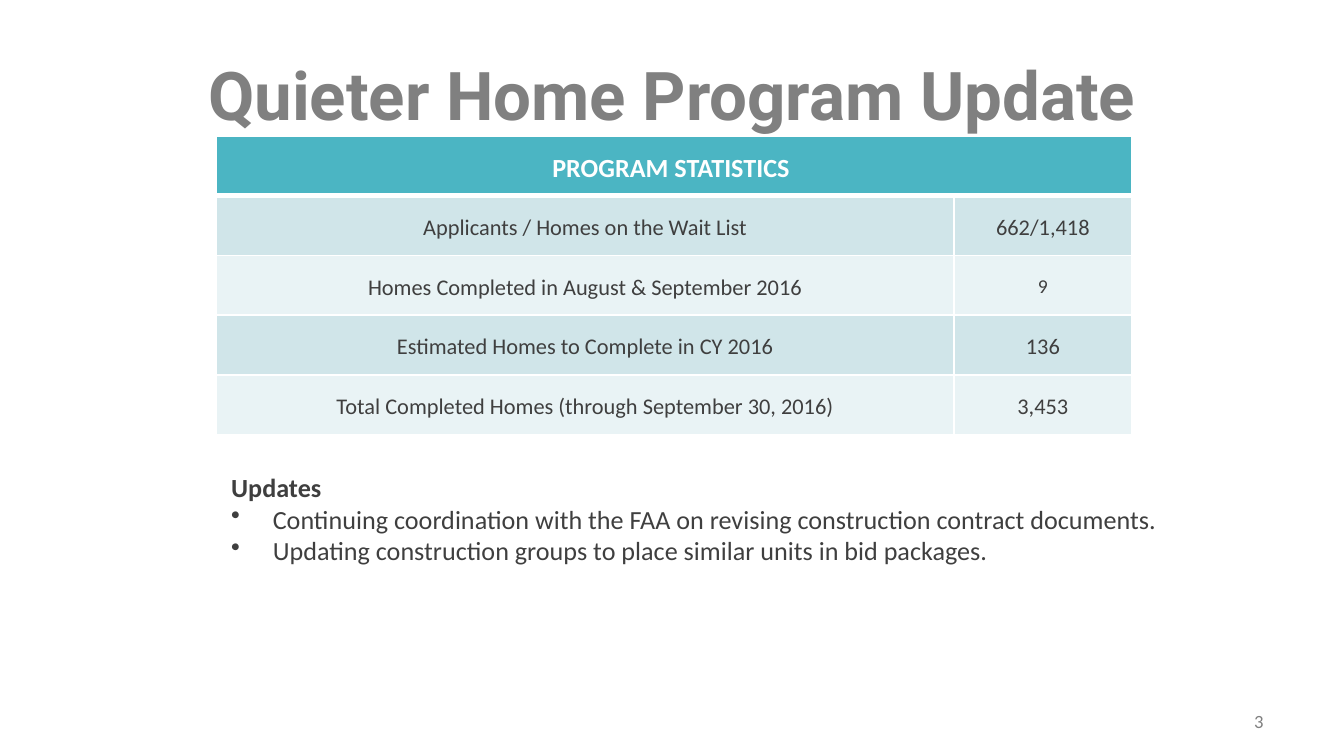
from dataclasses import dataclass

from lxml import etree
from pptx import Presentation
from pptx.dml.color import RGBColor
from pptx.enum.text import MSO_ANCHOR, PP_ALIGN
from pptx.oxml.ns import qn
from pptx.util import Inches, Pt

LEFT, CENTER, RIGHT = PP_ALIGN.LEFT, PP_ALIGN.CENTER, PP_ALIGN.RIGHT
TOP, MIDDLE = MSO_ANCHOR.TOP, MSO_ANCHOR.MIDDLE
BLANK_LAYOUT = 6
GRID = 100


@dataclass(frozen=True)
class Theme:
    heading_font: str = "Roboto"
    body_font: str = "Calibri"
    ink: str = "3F3F3F"
    muted: str = "808080"
    white: str = "FFFFFF"
    header: str = "4BB5C3"
    bands: tuple = ("D0E5E9", "E9F3F5")
    title_size: float = 36
    lead_size: float = 14
    cell_size: float = 12
    small_size: float = 10.5
    number_size: float = 10


THEME = Theme()


def write_text(para, text, size=THEME.lead_size, color=THEME.ink,
               font=THEME.body_font, bold=False, align=LEFT,
               line_spacing=None, gap=0, bullet=None):
    para.alignment = align
    para.line_spacing = line_spacing
    para.space_before = para.space_after = Pt(gap)
    span = para.add_run()
    span.text = text
    span.font.size = Pt(size)
    span.font.name = font
    span.font.bold = bold
    span.font.color.rgb = RGBColor.from_string(color)
    if bullet:
        properties = para._p.get_or_add_pPr()
        indent = Inches(0.31)
        properties.set("marL", str(indent))
        properties.set("indent", str(-indent))
        etree.SubElement(properties, qn("a:buChar"), char=bullet)


class SlideBuilder:
    def __init__(self, deck, theme):
        self.theme = theme
        self.column = deck.slide_width / GRID
        self.row = deck.slide_height / GRID
        self.slide = deck.slides.add_slide(deck.slide_layouts[BLANK_LAYOUT])

    def place(self, left, top, width, height):
        return (round(left * self.column), round(top * self.row),
                round(width * self.column), round(height * self.row))

    def text(self, area, lines, anchor=MIDDLE, insets=(0.1, 0.05)):
        frame = self.slide.shapes.add_textbox(*self.place(*area)).text_frame
        frame.word_wrap = True
        frame.vertical_anchor = anchor
        frame.margin_left = frame.margin_right = Inches(insets[0])
        frame.margin_top = frame.margin_bottom = Inches(insets[1])
        for index, (text, style) in enumerate(lines):
            para = frame.add_paragraph() if index else frame.paragraphs[0]
            write_text(para, text, **style)

    def border(self, cell, bottom):
        properties = cell._tc.get_or_add_tcPr()
        for side, width in (("L", 1), ("R", 1), ("T", 1), ("B", bottom)):
            line = etree.SubElement(properties, qn(f"a:ln{side}"), w=str(Pt(width)))
            fill = etree.SubElement(line, qn("a:solidFill"))
            etree.SubElement(fill, qn("a:srgbClr"), val=self.theme.white)

    def cell(self, cell, text, fill, bottom=1, **style):
        self.border(cell, bottom)
        cell.fill.solid()
        cell.fill.fore_color.rgb = RGBColor.from_string(fill)
        cell.vertical_anchor = MIDDLE
        cell.margin_top = cell.margin_bottom = 0
        if text:
            write_text(cell.text_frame.paragraphs[0], text, align=CENTER,
                       line_spacing=1.15, gap=5, **style)

    def statistics_table(self, area, heading, records, widths, sizes):
        theme = self.theme
        table = self.slide.shapes.add_table(
            len(records) + 1, len(widths), *self.place(*area)).table
        table.horz_banding = False
        for column, width in zip(table.columns, widths):
            column.width = round(width * self.column)
        first, last = table.cell(0, 0), table.cell(0, 1)
        first.merge(last)
        self.cell(first, heading, theme.header, bottom=3,
                  size=theme.lead_size, color=theme.white, bold=True)
        self.cell(last, "", theme.header, bottom=3)
        for row, record in enumerate(records, start=1):
            band = theme.bands[(row - 1) % 2]
            for column, text in enumerate(record):
                self.cell(table.cell(row, column), text, band,
                          size=sizes.get(text, theme.cell_size))


def main():
    deck = Presentation()
    deck.slide_width = Inches(10)
    deck.slide_height = deck.slide_width * 9 // 16
    page = SlideBuilder(deck, THEME)

    page.text((16.7, 61.87, 93.3, 25.96), [
        ("Updates", {"bold": True}),
        ("Continuing coordination with the FAA on revising construction contract documents.",
         {"bullet": "•"}),
        ("Updating construction groups to place similar units in bid packages.",
         {"bullet": "•"}),
    ], anchor=TOP, insets=(0.05, 0.03))
    page.text((0, 4.09, 100, 16.71), [
        ("Quieter Home Program Update",
         {"size": THEME.title_size, "font": THEME.heading_font,
          "color": THEME.muted, "bold": True, "align": CENTER}),
    ])
    page.text((71.7, 92.68, 23.3, 5.33), [
        ("3", {"size": THEME.number_size, "color": THEME.muted, "align": RIGHT}),
    ])
    page.statistics_table((16.1, 18.03, 68.1, 39.47), "PROGRAM STATISTICS ", [
        ("Applicants / Homes on the Wait List", "662/1,418"),
        ("Homes Completed in August & September 2016", "9"),
        ("Estimated Homes to Complete in CY 2016", "136"),
        ("Total Completed Homes (through September 30, 2016)", "3,453"),
    ], widths=(54.9, 13.2), sizes={"9": THEME.small_size})

    deck.save("out.pptx")


if __name__ == "__main__":
    main()
